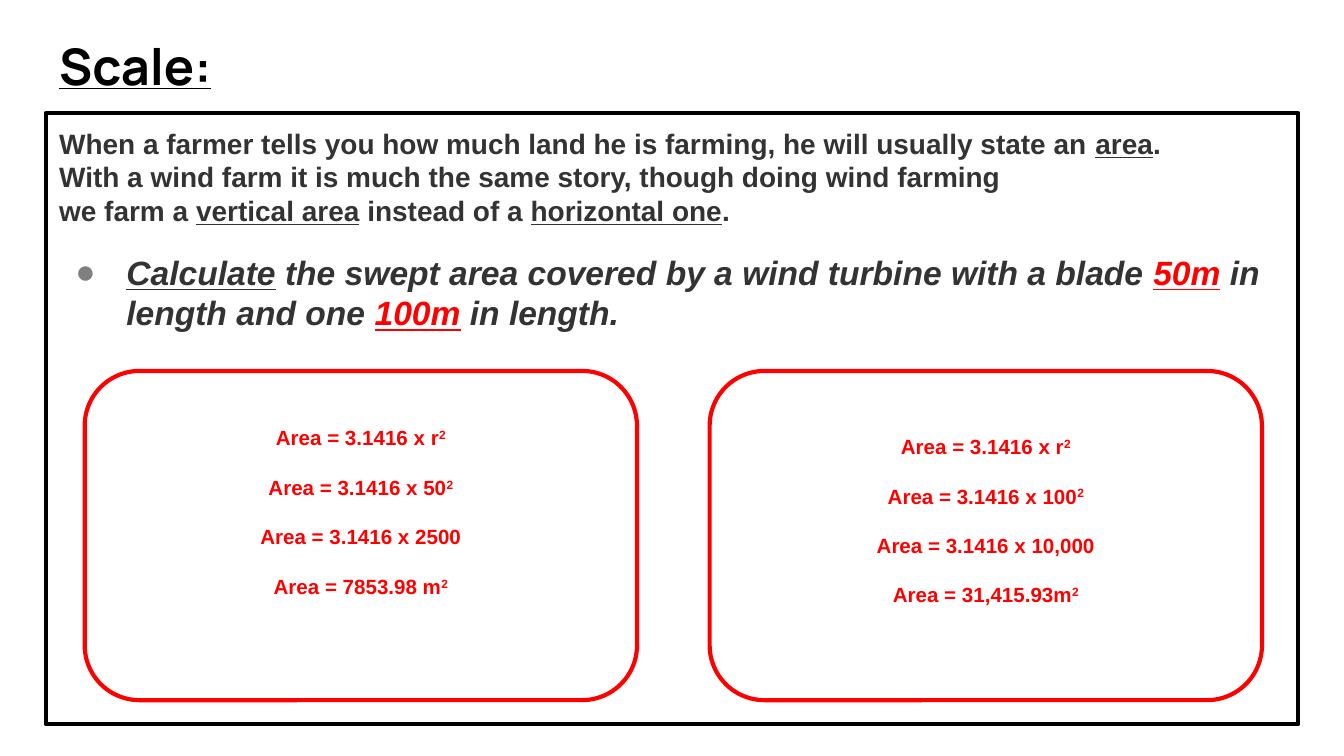
"""Build the wind turbine scale slide."""
from dataclasses import dataclass

from lxml.etree import SubElement
from pptx import Presentation
from pptx.dml.color import RGBColor
from pptx.enum.shapes import MSO_SHAPE as Shape
from pptx.enum.text import MSO_ANCHOR as Anchor, MSO_AUTO_SIZE as AutoSize, PP_ALIGN as Align
from pptx.oxml.ns import qn
from pptx.util import Inches, Pt


@dataclass(frozen=True)
class Theme:
    """Colours, fonts and type sizes of the slide."""
    black: str = "000000"
    ink: str = "333333"
    red: str = "FF0000"
    white: str = "FFFFFF"
    bullet: str = "7F7F7F"
    title_font: str = "Manrope"
    body_font: str = "Arial"
    title_size: int = 27
    body_size: int = 15
    task_size: int = 18
    sum_size: int = 11
    outline: float = 2.25


THEME = Theme()
WIDTH = 10
HEIGHT = WIDTH * 9 / 16
MARGIN, TITLE_TOP, BODY_TOP, BODY_HEIGHT = 0.34, 0.16, 0.84, 4.55
CARD_LEFT, CARD_STEP, CARD_TOP, CARD_WIDTH, CARD_HEIGHT = 0.63, 4.65, 2.76, 4.11, 2.45
INSET = 0.1
UNDERLINE = {"underline": True}
KEY_VALUE = {"underline": True, "color": THEME.red}

INTRO = [
    [("When a farmer tells you how much land he is farming, he will usually state an ", {}),
     ("area", UNDERLINE), (".", {})],
    [("With a wind farm it is much the same story, though doing wind farming", {})],
    [("we farm a ", {}), ("vertical area", UNDERLINE), (" instead of a ", {}),
     ("horizontal one", UNDERLINE), (".", {})],
]
TASK = [
    ("Calculate", UNDERLINE),
    (" the swept area covered by a wind turbine with a blade ", {}), ("50m", KEY_VALUE),
    (" in length and one ", {}), ("100m", KEY_VALUE), (" in length.", {}),
]
CARDS = [
    (["3.1416 x r²", "3.1416 x 50²", "3.1416 x 2500", "7853.98 m²"], 0.45),
    (["3.1416 x r²", "3.1416 x 100²", "3.1416 x 10,000", "31,415.93m²"], 0.32),
]


def place(shape, left, top, width, height):
    """Move and size a shape, in inches."""
    shape.left, shape.top = Inches(left), Inches(top)
    shape.width, shape.height = Inches(width), Inches(height)


def set_frame(text_frame, anchor, bottom=INSET):
    """Set wrapping, insets and anchor of a text frame."""
    text_frame.word_wrap = True
    text_frame.auto_size = AutoSize.NONE
    text_frame.vertical_anchor = anchor
    text_frame.margin_left = text_frame.margin_right = text_frame.margin_top = Inches(INSET)
    text_frame.margin_bottom = Inches(bottom)


def set_outline(shape, color):
    """Give a shape a solid outline."""
    shape.line.color.rgb = RGBColor.from_string(color)
    shape.line.width = Pt(THEME.outline)


def add_run(paragraph, text, size, color=THEME.ink, font=THEME.body_font,
            underline=False, italic=False, raised=False):
    """Add a bold run to a paragraph."""
    run = paragraph.add_run()
    run.text = text
    run.font.name, run.font.size, run.font.bold = font, Pt(size), True
    run.font.color.rgb = RGBColor.from_string(color)
    run.font.underline, run.font.italic = underline, italic
    if raised:
        run.font._element.set("baseline", "30000")


def space(paragraph, line, before=0, after=0, align=Align.LEFT):
    """Set alignment and spacing of a paragraph, in points."""
    paragraph.alignment = align
    paragraph.line_spacing = Pt(line)
    paragraph.space_before, paragraph.space_after = Pt(before), Pt(after)


def set_bullet(paragraph, character=None, left=0, indent=0):
    """Set the indents of a paragraph and its bullet, if any."""
    properties = paragraph._p.get_or_add_pPr()
    properties.set("marL", str(Inches(left)))
    properties.set("indent", str(Inches(indent)))
    if character is None:
        SubElement(properties, qn("a:buNone"))
        return
    color = SubElement(properties, qn("a:buClr"))
    SubElement(color, qn("a:srgbClr"), val=THEME.bullet)
    SubElement(properties, qn("a:buFont"), typeface=THEME.body_font)
    SubElement(properties, qn("a:buChar"), char=character)


def fill_title(shape, text):
    """Format the title placeholder."""
    place(shape, MARGIN, TITLE_TOP, WIDTH - 2 * MARGIN, BODY_TOP - TITLE_TOP)
    set_frame(shape.text_frame, Anchor.TOP)
    paragraph = shape.text_frame.paragraphs[0]
    paragraph.alignment = Align.LEFT
    add_run(paragraph, text, THEME.title_size, THEME.black, THEME.title_font, underline=True)


def fill_body(shape):
    """Write the introduction and the task in the framed body placeholder."""
    place(shape, MARGIN, BODY_TOP, WIDTH - 2 * MARGIN, BODY_HEIGHT)
    set_outline(shape, THEME.black)
    text_frame = shape.text_frame
    set_frame(text_frame, Anchor.TOP)
    for index, segments in enumerate(INTRO):
        paragraph = text_frame.add_paragraph() if index else text_frame.paragraphs[0]
        space(paragraph, 18)
        set_bullet(paragraph)
        for text, style in segments:
            add_run(paragraph, text, THEME.body_size, **style)
    task = text_frame.add_paragraph()
    space(task, 21.5, before=13.5)
    set_bullet(task, "●", 0.5, -0.38)
    for text, style in TASK:
        add_run(task, text, THEME.task_size, italic=True, **style)


def add_card(slide, column, steps, bottom):
    """Add a rounded card with the steps of one calculation."""
    card = slide.shapes.add_shape(Shape.ROUNDED_RECTANGLE, 0, 0, 0, 0)
    place(card, CARD_LEFT + column * CARD_STEP, CARD_TOP, CARD_WIDTH, CARD_HEIGHT)
    card.shadow.inherit = False
    card.fill.solid()
    card.fill.fore_color.rgb = RGBColor.from_string(THEME.white)
    set_outline(card, THEME.red)
    text_frame = card.text_frame
    set_frame(text_frame, Anchor.MIDDLE, bottom)
    for index, step in enumerate(steps):
        paragraph = text_frame.add_paragraph() if index else text_frame.paragraphs[0]
        last = index == len(steps) - 1
        space(paragraph, 13, after=0 if last else 13.5, align=Align.CENTER)
        add_run(paragraph, "Area = " + step.rstrip("²"), THEME.sum_size, THEME.red)
        if step.endswith("²"):
            add_run(paragraph, "2", THEME.sum_size, THEME.red, raised=True)


def main():
    """Build and save the slide."""
    presentation = Presentation()
    presentation.slide_width, presentation.slide_height = Inches(WIDTH), Inches(HEIGHT)
    slide = presentation.slides.add_slide(presentation.slide_layouts[1])
    fill_title(slide.shapes.title, "Scale:")
    fill_body(slide.placeholders[1])
    for column, (steps, bottom) in enumerate(CARDS):
        add_card(slide, column, steps, bottom)
    presentation.save("out.pptx")


if __name__ == "__main__":
    main()
